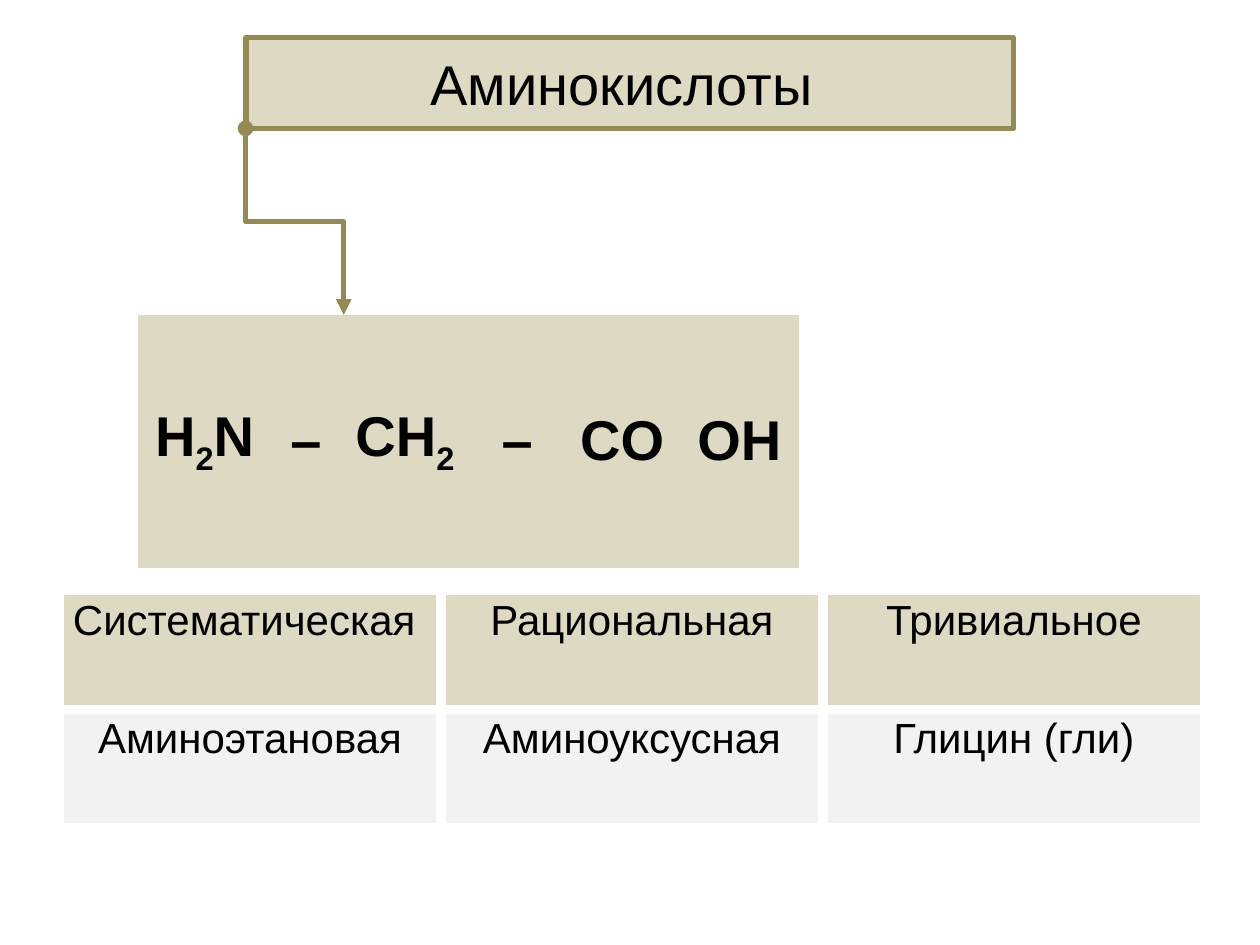
from lxml import etree
from pptx import Presentation
from pptx import oxml
from pptx import util as u
from pptx.dml.color import RGBColor
from pptx.enum import shapes, text
from pptx.oxml import ns

COLORS = {"sand": "DDD9C3", "olive": "948A54", "gray": "F2F2F2", "white": "FFFFFF", "black": "000000"}
NO_GRID_STYLE = "{2D5ABB26-0587-4C30-8999-92F81FD0307C}"


def format_paragraph(paragraph, size, bold=False):
    paragraph.alignment = text.PP_ALIGN.CENTER
    for run in paragraph.runs:
        run.font.name = "Arial"
        run.font.size = u.Pt(size)
        run.font.bold = bold
        run.font.color.rgb = RGBColor.from_string(COLORS["black"])


def add_plain_table(left, top, widths, row_height, row_count):
    frame = slide.shapes.add_table(row_count, len(widths), u.Cm(left), u.Cm(top),
                                   u.Cm(sum(widths)), u.Cm(row_height * row_count))
    table = frame.table
    table.first_row = table.horz_banding = False
    table._tbl.tblPr.find(ns.qn("a:tableStyleId")).text = NO_GRID_STYLE
    for column, width in zip(table.columns, widths):
        column.width = u.Cm(width)
    for row in table.rows:
        row.height = u.Cm(row_height)
    for cell in table.iter_cells():
        cell.fill.solid()
        cell.fill.fore_color.rgb = RGBColor.from_string(COLORS["sand"])
    return table


presentation = Presentation()
presentation.slide_width = u.Cm(25.4)
presentation.slide_height = u.Cm(19.05)
slide = presentation.slides.add_slide(presentation.slide_layouts[6])

title = slide.shapes.add_shape(shapes.MSO_SHAPE.ROUNDED_RECTANGLE,
                               u.Cm(4.96), u.Cm(0.76), u.Cm(15.47), u.Cm(1.83))
title.adjustments[0] = 0
title.shadow.inherit = False
title.fill.solid()
title.fill.fore_color.rgb = RGBColor.from_string(COLORS["sand"])
title.line.color.rgb = RGBColor.from_string(COLORS["olive"])
title.line.width = u.Pt(3)
title.text_frame.text = "Аминокислоты "
title.text_frame.vertical_anchor = text.MSO_ANCHOR.MIDDLE
format_paragraph(title.text_frame.paragraphs[0], 32)

arrow = slide.shapes.add_connector(shapes.MSO_CONNECTOR.ELBOW,
                                   u.Cm(7.82), u.Cm(3.48), u.Cm(4.06), u.Cm(5.46))
arrow.line.color.rgb = RGBColor.from_string(COLORS["olive"])
arrow.line.width = u.Pt(3)
properties = arrow._element.spPr
properties.find(ns.qn("a:xfrm")).set("rot", "16200000")
line = properties.find(ns.qn("a:ln"))
for tag, kind in (("a:headEnd", "oval"), ("a:tailEnd", "triangle")):
    etree.SubElement(line, ns.qn(tag)).set("type", kind)
etree.SubElement(properties, ns.qn("a:effectLst"))

formula = [["H", "2", "N"], ["–"], ["CH", "2"], ["–"], ["CO"], ["OH"]]
formula_table = add_plain_table(2.78, 6.35, [2.69, 1.4, 2.59, 1.93, 2.31, 2.41], 1.7, 3)
for cell, parts in zip(formula_table.rows[1].cells, formula):
    cell.vertical_anchor = text.MSO_ANCHOR.MIDDLE
    cell.margin_left = cell.margin_right = u.Cm(0.1)
    paragraph = cell.text_frame.paragraphs[0]
    for part in parts:
        run = paragraph.add_run()
        run.text = part
        if part.isdigit():
            run.font._element.set("baseline", "-25000")
    format_paragraph(paragraph, 32, bold=True)

names = [
    ("sand", ["Систематическая ", "Рациональная", "Тривиальное"]),
    ("gray", ["Аминоэтановая", "Аминоуксусная", "Глицин (гли)"]),
]
names_table = add_plain_table(1.19, 11.91, [7.7] * 3, 2.39, len(names))
for row, (fill, labels) in zip(names_table.rows, names):
    for cell, label in zip(row.cells, labels):
        cell.text_frame.text = label
        format_paragraph(cell.text_frame.paragraphs[0], 24)
        cell.fill.fore_color.rgb = RGBColor.from_string(COLORS[fill])
        for position, side in enumerate(("lnL", "lnR", "lnT", "lnB")):
            border = oxml.parse_xml(
                f'<a:{side} {ns.nsdecls("a")} w="{u.Pt(6)}"><a:solidFill>'
                f'<a:srgbClr val="{COLORS["white"]}"/></a:solidFill></a:{side}>')
            cell._tc.get_or_add_tcPr().insert(position, border)

presentation.save("out.pptx")
